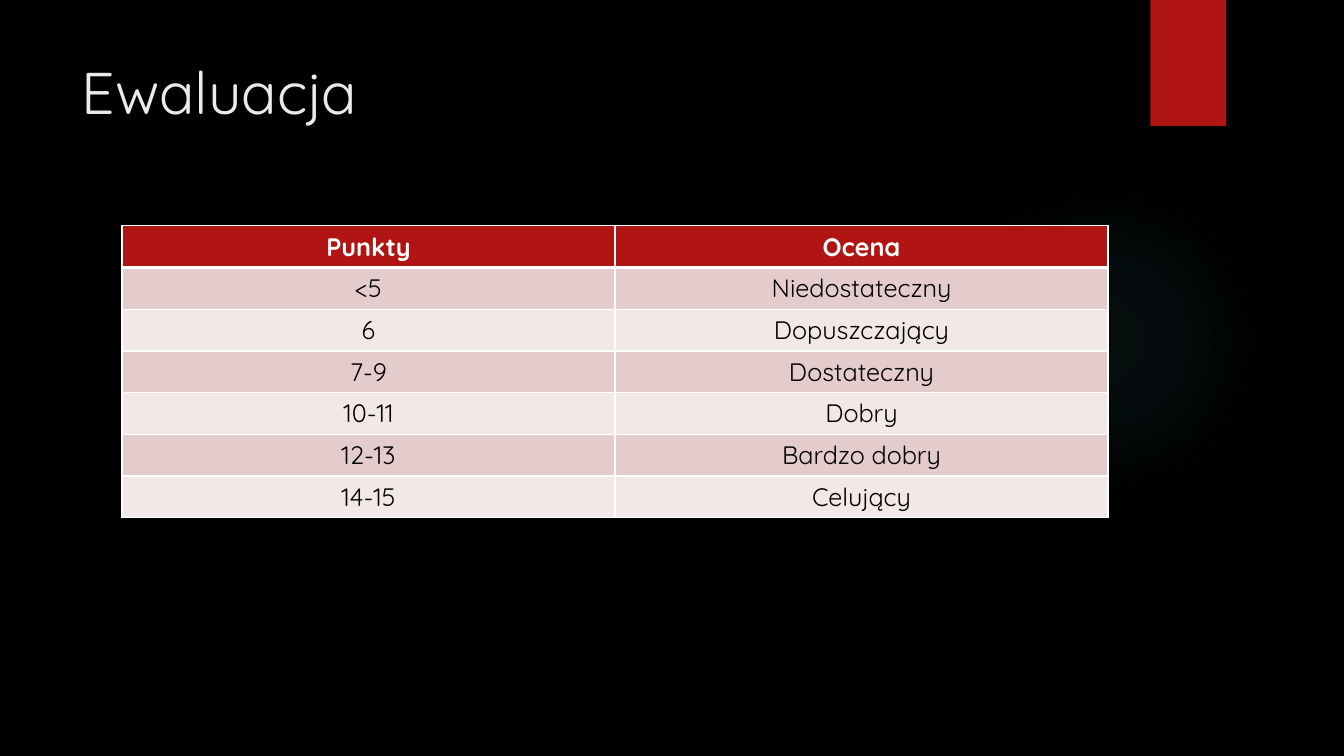
from pptx import Presentation
from pptx.dml.color import RGBColor
from pptx.enum.shapes import MSO_SHAPE
from pptx.enum.text import MSO_ANCHOR, MSO_AUTO_SIZE, PP_ALIGN
from pptx.oxml import parse_xml
from pptx.oxml.ns import nsdecls
from pptx.util import Inches, Pt

COLORS = {
    "background": "000000", "glow": "50B9C1", "accent": "B01513",
    "title": "EBEBEB", "header text": "FFFFFF", "body text": "000000",
    "border": "FFFFFF", "odd row": "E4CCCC", "even row": "F2E8E7",
}
TITLE_FONT = {"name": "Quicksand", "size": Pt(42), "bold": False}
HEADER_FONT = {"name": "Quicksand", "size": Pt(18), "bold": True}
BODY_FONT = {**HEADER_FONT, "bold": False}
GLOW_STOPS = [(0, 7), (36, 6), (69, 0)]  # position and opacity in percent
GRADES = [
    ("Punkty", "Ocena"),
    ("<5", "Niedostateczny"),
    ("6", "Dopuszczający"),
    ("7-9", "Dostateczny"),
    ("10-11", "Dobry"),
    ("12-13", "Bardzo dobry"),
    ("14-15", "Celujący"),
]


def color(name):
    return RGBColor.from_string(COLORS[name])


def format_font(font, values, color_name):
    for attribute, value in values.items():
        setattr(font, attribute, value)
    font.color.rgb = color(color_name)


def add_plain_shape(slide, preset, box):
    """Add a preset shape without outline or shadow."""
    shape = slide.shapes.add_shape(preset, *map(Inches, box))
    shape.line.fill.background()
    shape.shadow.inherit = False
    return shape


def add_glow(slide, box):
    glow = add_plain_shape(slide, MSO_SHAPE.OVAL, box)
    stops = "".join(
        f'<a:gs pos="{position * 1000}"><a:srgbClr val="{COLORS["glow"]}">'
        f'<a:alpha val="{opacity * 1000}"/></a:srgbClr></a:gs>'
        for position, opacity in GLOW_STOPS)
    gradient = parse_xml(
        f'<a:gradFill {nsdecls("a")}><a:gsLst>{stops}</a:gsLst><a:path path="circle">'
        '<a:fillToRect l="50000" t="50000" r="50000" b="50000"/></a:path></a:gradFill>')
    glow.element.spPr.find("{*}prstGeom").addnext(gradient)


def add_ribbon(slide, box):
    ribbon = add_plain_shape(slide, MSO_SHAPE.RECTANGLE, box)
    ribbon.fill.solid()
    ribbon.fill.fore_color.rgb = color("accent")


def fill_title(slide, box, text):
    title = slide.shapes.title
    title.left, title.top, title.width, title.height = map(Inches, box)
    frame = title.text_frame
    frame.text = text
    frame.word_wrap = True
    frame.auto_size = MSO_AUTO_SIZE.NONE
    frame.vertical_anchor = MSO_ANCHOR.TOP
    paragraph = frame.paragraphs[0]
    paragraph.alignment = PP_ALIGN.LEFT
    format_font(paragraph.font, TITLE_FONT, "title")


def set_borders(cell, widths):
    """Draw cell edges; widths maps L, R, T and B to points."""
    properties = cell._tc.get_or_add_tcPr()
    for index, (side, width) in enumerate(widths.items()):
        properties.insert(index, parse_xml(
            f'<a:ln{side} {nsdecls("a")} w="{Pt(width)}"><a:solidFill>'
            f'<a:srgbClr val="{COLORS["border"]}"/></a:solidFill></a:ln{side}>'))


def add_grade_table(slide, box):
    table = slide.shapes.add_table(len(GRADES), len(GRADES[0]), *map(Inches, box)).table
    for row_index, values in enumerate(GRADES):
        is_header = row_index == 0
        if is_header:
            fill_name, font, text_color = "accent", HEADER_FONT, "header text"
        else:
            fill_name = "odd row" if row_index % 2 else "even row"
            font, text_color = BODY_FONT, "body text"
        widths = {"L": 1, "R": 1, "T": 3 if row_index == 1 else 1, "B": 3 if is_header else 1}
        for column_index, value in enumerate(values):
            cell = table.cell(row_index, column_index)
            cell.text = value
            cell.fill.solid()
            cell.fill.fore_color.rgb = color(fill_name)
            set_borders(cell, widths)
            paragraph = cell.text_frame.paragraphs[0]
            paragraph.alignment = PP_ALIGN.CENTER
            format_font(paragraph.font, font, text_color)


def build_evaluation_slide(presentation):
    slide = presentation.slides.add_slide(presentation.slide_layouts[5])
    slide.background.fill.solid()
    slide.background.fill.fore_color.rgb = color("background")
    add_glow(slide, (9.41, 1.83, 3.08, 3.08))
    add_ribbon(slide, (11.41, 0, 0.75, 1.25))
    fill_title(slide, (0.71, 0.5, 10.29, 1.53), "Ewaluacja")
    add_grade_table(slide, (1.21, 2.24, 9.78, 2.84))


def main():
    presentation = Presentation()
    presentation.slide_width = Inches(13.33)
    presentation.slide_height = Inches(7.5)
    build_evaluation_slide(presentation)
    presentation.save("out.pptx")


if __name__ == "__main__":
    main()
